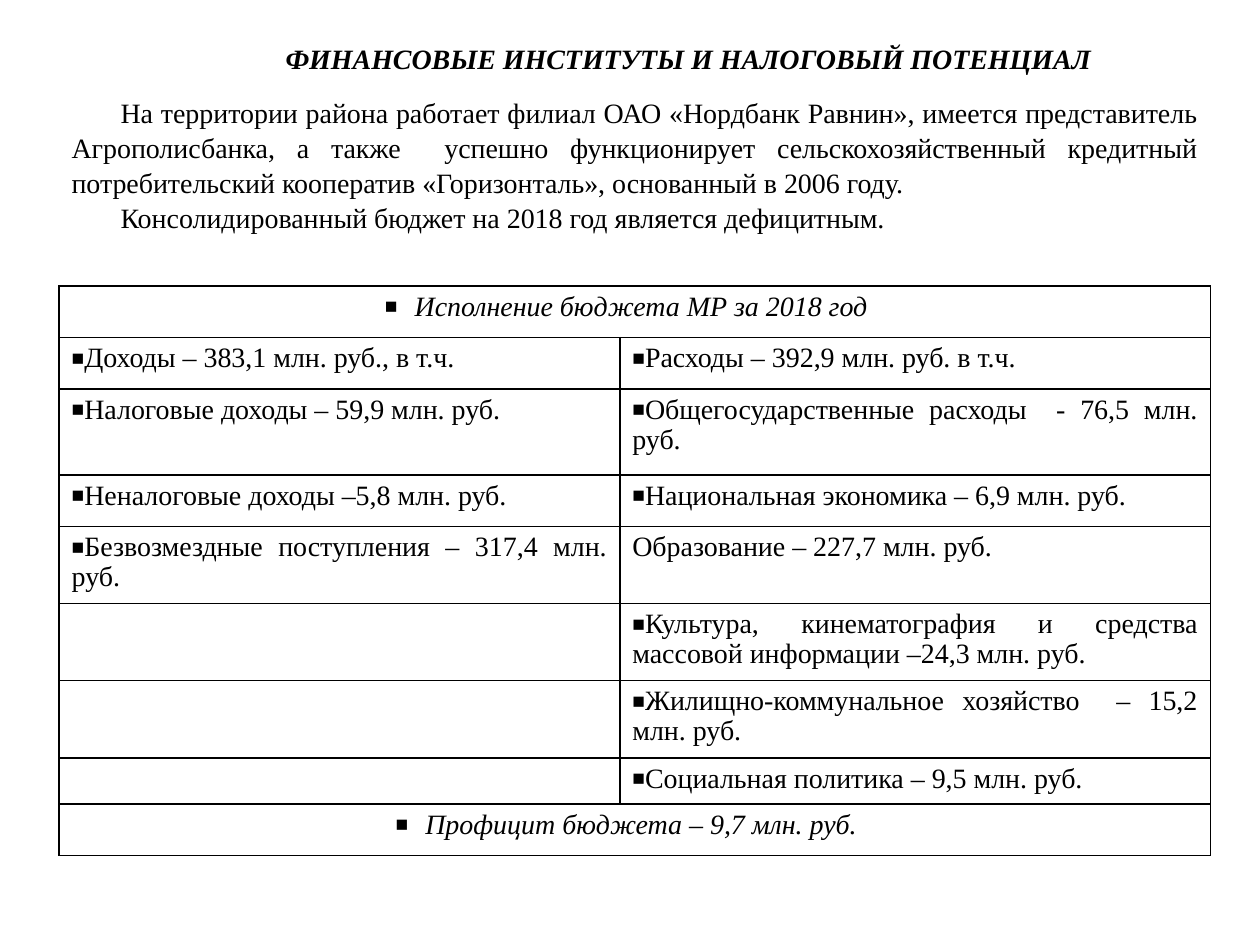
from dataclasses import dataclass
from lxml import etree
from pptx import Presentation
from pptx.dml.color import RGBColor
from pptx.enum.text import MSO_ANCHOR as Anchor, PP_ALIGN as Align
from pptx.oxml.ns import qn
from pptx.util import Pt


@dataclass(frozen=True)
class Theme:
    font: str = "Times New Roman"
    size: int = 16
    ink: str = "000000"
    line: int = 1
    lead: float = 0.96


THEME = Theme()
TITLE = "ФИНАНСОВЫЕ ИНСТИТУТЫ И НАЛОГОВЫЙ ПОТЕНЦИАЛ"
INTRO = [
    "На территории района работает филиал ОАО «Нордбанк Равнин», имеется "
    "представитель Агрополисбанка, а также  успешно функционирует "
    "сельскохозяйственный кредитный потребительский кооператив "
    "«Горизонталь», основанный в 2006 году.",
    "Консолидированный бюджет на 2018 год является дефицитным.",
]
PLAIN = "Образование – 227,7 млн. руб."
BUDGET = [
    (29.5, "Исполнение бюджета МР за 2018 год", None),
    (29.5, "Доходы – 383,1 млн. руб., в т.ч.", "Расходы – 392,9 млн. руб. в т.ч."),
    (49, "Налоговые доходы – 59,9 млн. руб.",
     "Общегосударственные расходы  - 76,5 млн. руб."),
    (29.5, "Неналоговые доходы –5,8 млн. руб.",
     "Национальная экономика – 6,9 млн. руб."),
    (42.8, "Безвозмездные поступления – 317,4 млн. руб.", PLAIN),
    (42.8, "", "Культура, кинематография и средства массовой информации "
     "–24,3 млн. руб."),
    (42.8, "", "Жилищно-коммунальное хозяйство  – 15,2 млн. руб."),
    (25, "", "Социальная политика – 9,5 млн. руб."),
    (29.5, "Профицит бюджета – 9,7 млн. руб.", None),
]


def style(para, align, bold=False, italic=False):
    para.alignment = align
    for run in para.runs:
        font = run.font
        font.name, font.size = THEME.font, Pt(THEME.size)
        font.bold, font.italic = bold, italic
        font.color.rgb = RGBColor.from_string(THEME.ink)


def add_box(slide, box):
    frame = slide.shapes.add_textbox(*map(Pt, box)).text_frame
    frame.word_wrap = True
    return frame


def add_title(slide, box):
    frame = add_box(slide, box)
    frame.vertical_anchor = Anchor.MIDDLE
    frame.text = TITLE
    style(frame.paragraphs[0], Align.CENTER, bold=True, italic=True)


def add_intro(slide, box):
    frame = add_box(slide, box)
    frame.text = "\n".join(INTRO)
    for para in frame.paragraphs:
        style(para, Align.JUSTIFY)
        para.line_spacing = 1.04
        para._p.get_or_add_pPr().set("indent", str(Pt(28)))


def add_bullet(para):
    props = para._p.get_or_add_pPr()
    etree.SubElement(props, qn("a:buSzPct"), val="75000")
    etree.SubElement(props, qn("a:buFont"), typeface=THEME.font)
    etree.SubElement(props, qn("a:buChar"), char="■")


def add_border(cell):
    props = cell._tc.get_or_add_tcPr()
    for spot, side in enumerate(("lnL", "lnR", "lnT", "lnB")):
        line = etree.Element(qn("a:" + side), w=str(Pt(THEME.line)))
        fill = etree.SubElement(line, qn("a:solidFill"))
        etree.SubElement(fill, qn("a:srgbClr"), val=THEME.ink)
        props.insert(spot, line)


def fill_cell(cell, text, wide):
    cell.fill.background()
    add_border(cell)
    cell.text = text or ""
    para = cell.text_frame.paragraphs[0]
    style(para, Align.CENTER if wide else Align.JUSTIFY, italic=wide)
    para.line_spacing = THEME.lead
    if not text:
        etree.SubElement(para._p, qn("a:endParaRPr"), sz=str(THEME.size * 100))
    elif text != PLAIN:
        add_bullet(para)


def add_budget(slide, box):
    left, top, width, height = box
    grid = slide.shapes.add_table(len(BUDGET), 2, *map(Pt, box)).table
    grid.first_row = grid.horz_banding = False
    split = 320.4
    for col, size in zip(grid.columns, (split, width - split)):
        col.width = Pt(size)
    for row, (tall, *texts) in enumerate(BUDGET):
        grid.rows[row].height = Pt(tall)
        wide = texts[1] is None
        for col, text in enumerate(texts):
            fill_cell(grid.cell(row, col), text, wide)
        if wide:
            grid.cell(row, 0).merge(grid.cell(row, 1))


def main():
    deck = Presentation()
    deck.slide_width, deck.slide_height = Pt(720), Pt(540)
    slide = deck.slides.add_slide(deck.slide_layouts[6])
    add_title(slide, (78.5, 16.6, 630, 33.8))
    add_intro(slide, (33.8, 50.4, 658, 95.8))
    add_budget(slide, (33.8, 163.4, 658, sum(row[0] for row in BUDGET)))
    deck.save("out.pptx")


if __name__ == "__main__":
    main()
